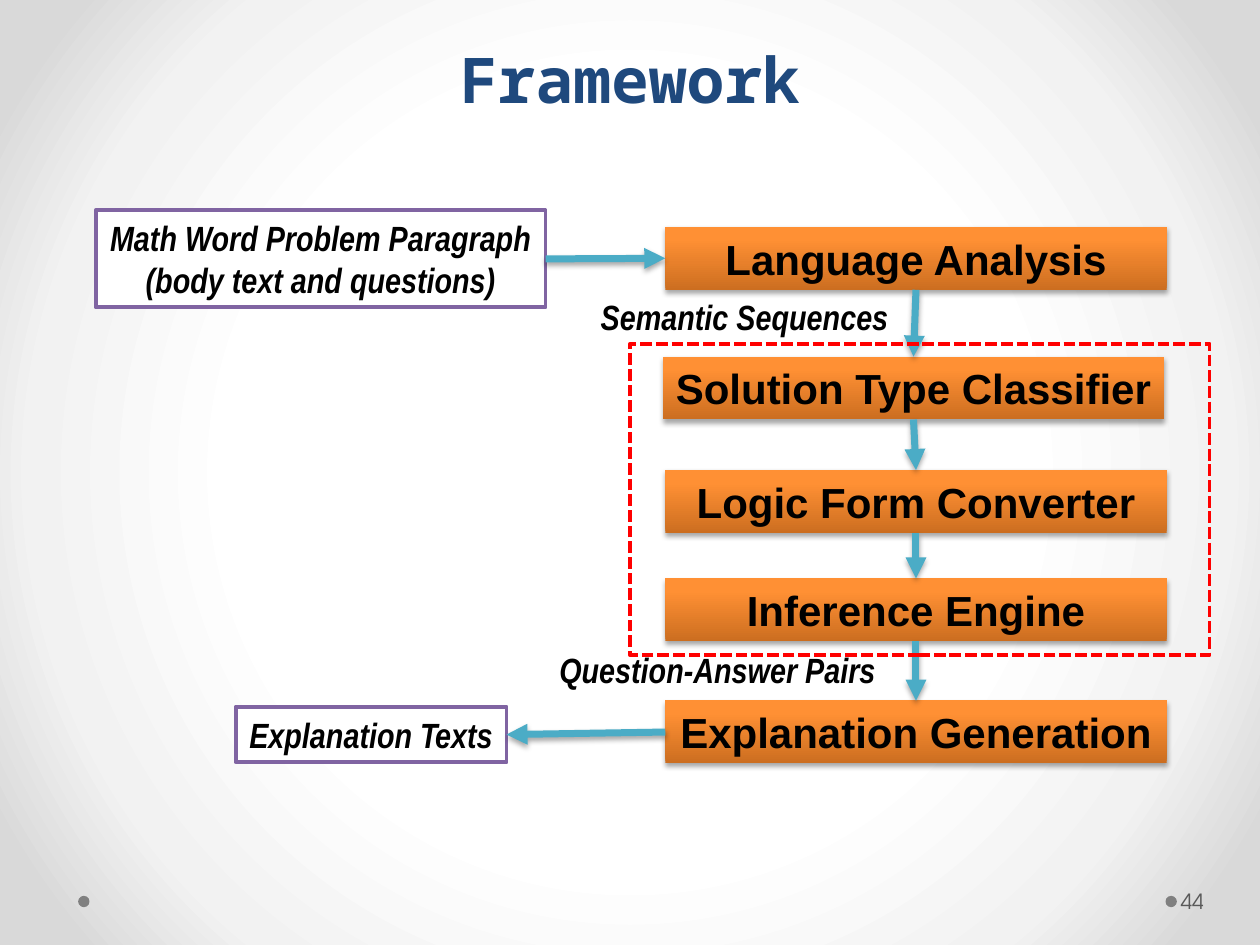
from pptx import Presentation
from pptx.dml.color import RGBColor
from pptx.enum.dml import MSO_LINE
from pptx.enum.shapes import MSO_CONNECTOR, MSO_SHAPE
from pptx.enum.text import MSO_ANCHOR, PP_ALIGN
from pptx.oxml import parse_xml
from pptx.oxml.ns import nsdecls, qn
from pptx.util import Inches, Pt

STEP_LEFT, STEP_W, STEP_H = 5.28, 3.98, 0.5
STEPS = [  # text, left, top
    ("Language Analysis", STEP_LEFT, 1.8),
    ("Solution Type Classifier", STEP_LEFT - 0.02, 2.83),
    ("Logic Form Converter", STEP_LEFT, 3.73),
    ("Inference Engine", STEP_LEFT, 4.59),
    ("Explanation Generation", STEP_LEFT, 5.56),
]
INPUT = (["Math Word Problem Paragraph", "(body text and questions)"],
         (0.76, 1.67, 3.57, 0.77))
OUTPUT = (["Explanation Texts"], (1.87, 5.61, 2.15, 0.44))
LABELS = [
    ("Semantic Sequences", (4.66, 2.29, 2.5, 0.44)),
    ("Question-Answer Pairs", (4.33, 5.09, 2.73, 0.44)),
]
SOLVER_FRAME = (5, 2.73, 4.6, 2.47)
FOOTER_DOTS = [(9.25, 7.11, 0.09, 0.09), (0.62, 7.11, 0.09, 0.09)]

TITLE_FONT = dict(name="Noto Sans Mono", size=Pt(36), bold=True, italic=False)
STEP_FONT = dict(name="Arial", size=Pt(24), bold=True)
NOTE_FONT = dict(name="Arial Narrow", size=Pt(20), bold=True, italic=True)
NUMBER_FONT = dict(name="TeX Gyre Adventor", size=Pt(12))

PAGE_STOPS = [(0, "FFFFFF"), (50, "FFFFFF"), (76, "F2F2F2"), (92, "D9D9D9"), (100, "D9D9D9")]
STEP_STOPS = [(0, "CC6E20"), (80, "FF9034"), (100, "FF9136")]
CENTRE_OUT = ('<a:path path="circle"><a:fillToRect l="50000" t="50000" '
              'r="50000" b="50000"/></a:path>')
BOTTOM_UP = '<a:lin ang="16200000" scaled="0"/>'


def rgb(value):
    return RGBColor.from_string(value)


def box(at):
    return [Inches(v) for v in at]


def set_gradient(fill, owner, stops, direction):
    """Give the fill, which lies inside the owner element, any number of stops."""
    fill.gradient()
    old = next(owner.iter(qn("a:gradFill")))
    gs = "".join(f'<a:gs pos="{pos * 1000}"><a:srgbClr val="{color}"/></a:gs>'
                 for pos, color in stops)
    new = parse_xml(f'<a:gradFill {nsdecls("a")} rotWithShape="1">'
                    f'<a:gsLst>{gs}</a:gsLst>{direction}</a:gradFill>')
    old.getparent().replace(old, new)


def add_shadow(sp_pr):
    sp_pr.append(parse_xml(
        f'<a:effectLst {nsdecls("a")}><a:outerShdw blurRad="{Pt(3.1)}" dist="{Pt(1.8)}" '
        'dir="5400000" rotWithShape="0"><a:srgbClr val="000000">'
        '<a:alpha val="35000"/></a:srgbClr></a:outerShdw></a:effectLst>'))


def write(tf, lines, font, color="000000", align=PP_ALIGN.CENTER, wrap=False):
    tf.word_wrap = wrap
    tf.vertical_anchor = MSO_ANCHOR.MIDDLE
    for i, line in enumerate(lines):
        p = tf.paragraphs[0] if i == 0 else tf.add_paragraph()
        p.alignment = align
        r = p.add_run()
        r.text = line
        for key, value in font.items():
            setattr(r.font, key, value)
        r.font.color.rgb = rgb(color)


def add_shape(s, at, kind=MSO_SHAPE.RECTANGLE, fill=None, line=None):
    sp = s.shapes.add_shape(kind, *box(at))
    if fill:
        sp.fill.solid()
        sp.fill.fore_color.rgb = rgb(fill)
    else:
        sp.fill.background()
    if line:
        sp.line.color.rgb = rgb(line)
        sp.line.width = Pt(2.25)
    else:
        sp.line.fill.background()
    return sp


def add_flat(s, at, **look):
    sp = add_shape(s, at, **look)
    sp.shadow.inherit = False
    return sp


def add_step(s, text, left, top):
    sp = add_shape(s, (left, top, STEP_W, STEP_H))
    set_gradient(sp.fill, sp.element, STEP_STOPS, BOTTOM_UP)
    add_shadow(sp.element.spPr)
    write(sp.text_frame, [text], STEP_FONT)
    return sp


def add_note(s, lines, at):
    sp = add_flat(s, at, fill="FFFFFF", line="8064A2")
    write(sp.text_frame, lines, NOTE_FONT)
    return sp


def add_arrow(s, start, start_side, end, end_side):
    c = s.shapes.add_connector(MSO_CONNECTOR.STRAIGHT, 0, 0, 0, 0)
    c.begin_connect(start, start_side)
    c.end_connect(end, end_side)
    c.line.color.rgb = rgb("4BACC6")
    c.line.width = Pt(4)
    c.line._get_or_add_ln().append(
        parse_xml(f'<a:tailEnd {nsdecls("a")} type="triangle"/>'))
    add_shadow(c.element.spPr)


def main():
    prs = Presentation()
    prs.slide_width, prs.slide_height = Inches(10), Inches(7.5)
    s = prs.slides.add_slide(prs.slide_layouts[5])
    set_gradient(s.background.fill, s.element, PAGE_STOPS, CENTRE_OUT)

    for at in FOOTER_DOTS:
        add_flat(s, at, kind=MSO_SHAPE.OVAL, fill="808080")

    title = s.shapes.title
    title.left, title.top, title.width, title.height = box((0.5, 0, 9, 1.03))
    write(title.text_frame, ["Framework"], TITLE_FONT, "1F497D", wrap=True)
    title.text_frame.paragraphs[0].line_spacing = Pt(58)

    source = add_note(s, *INPUT)
    result = add_note(s, *OUTPUT)
    steps = [add_step(s, *step) for step in STEPS]

    add_arrow(s, source, 3, steps[0], 1)
    for upper, lower in zip(steps, steps[1:]):
        add_arrow(s, upper, 2, lower, 0)
    add_arrow(s, steps[-1], 1, result, 3)

    for text, at in LABELS:
        write(s.shapes.add_textbox(*box(at)).text_frame, [text], NOTE_FONT)

    frame = add_flat(s, SOLVER_FRAME, line="FF0000")
    frame.line.dash_style = MSO_LINE.SQUARE_DOT

    number = s.shapes.add_textbox(*box((9.34, 6.95, 0.61, 0.4))).text_frame
    number.margin_left, number.margin_right = Inches(0.03), Inches(0.05)
    write(number, ["44"], NUMBER_FONT, "595959", PP_ALIGN.LEFT, wrap=True)

    prs.save("out.pptx")


if __name__ == "__main__":
    main()
